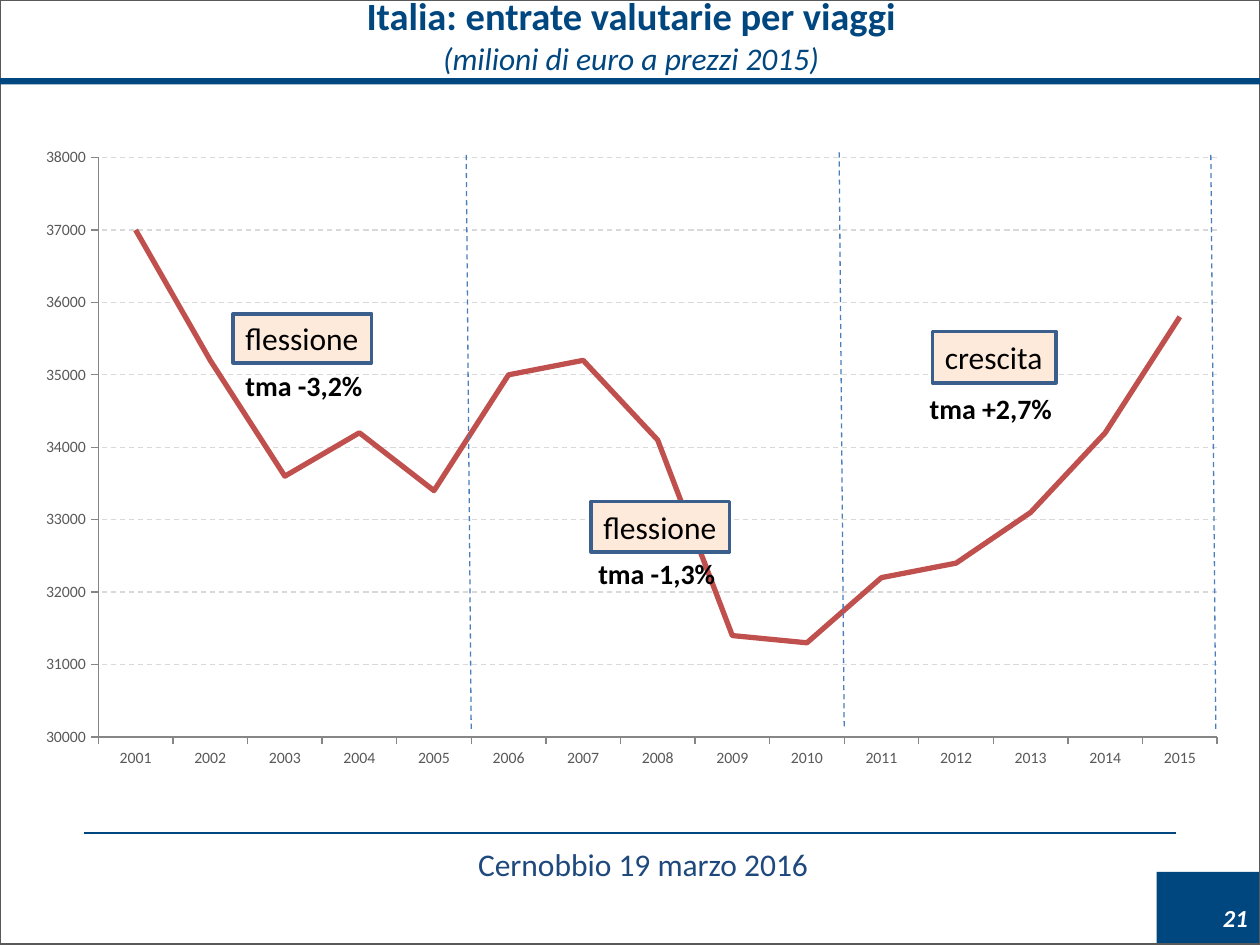
from typing import NamedTuple

from lxml import etree
from pptx import Presentation
from pptx.chart import data
from pptx.dml import color
from pptx.enum import chart as charts, dml, shapes, text
from pptx.oxml import parse_xml
from pptx.oxml import ns
from pptx.util import Inches, Pt

NAVY = "00467F"
GREY = "595959"
BLACK = "000000"
FONT = "Calibri"


class Box(NamedTuple):
    left: float
    top: float
    width: float
    height: float

    def inches(self) -> list:
        return [Inches(side) for side in self]


class Trend(NamedTuple):
    label: str
    label_box: Box
    rate: str
    rate_box: Box


TRENDS = [
    Trend("crescita", Box(7.4, 2.63, 0.98, 0.41), "tma +2,7%", Box(7.28, 3.06, 1.18, 0.37)),
    Trend("flessione", Box(4.69, 3.98, 1.1, 0.4), "tma -1,3%", Box(4.65, 4.37, 1.14, 0.37)),
    Trend("flessione", Box(1.85, 2.49, 1.1, 0.39), "tma -3,2%", Box(1.85, 2.88, 1.14, 0.37)),
]
PERIOD_ENDS = [(3.7, 1.23), (6.66, 1.21), (9.61, 1.23)]
REVENUES = [37000, 35200, 33600, 34200, 33400, 35000, 35200, 34100,
            31400, 31300, 32200, 32400, 33100, 34200, 35800]


def rgb(code: str) -> color.RGBColor:
    return color.RGBColor.from_string(code)


def style_line(line, code: str, width: float, dashed: bool = False) -> None:
    line.color.rgb = rgb(code)
    line.width = Pt(width)
    if dashed:
        line.dash_style = dml.MSO_LINE.DASH


def add_rect(slide, box: Box, fill: str | None = None,
             line: str | None = None, width: float = 1):
    rect = slide.shapes.add_shape(shapes.MSO_SHAPE.RECTANGLE, *box.inches())
    rect.shadow.inherit = False
    if fill:
        rect.fill.solid()
        rect.fill.fore_color.rgb = rgb(fill)
    else:
        rect.fill.background()
    if line:
        style_line(rect.line, line, width)
    else:
        rect.line.fill.background()
    return rect


def write(paragraph, wording: str, *, size: float, ink: str = BLACK, bold: bool = False,
          italic: bool = False, align=text.PP_ALIGN.LEFT) -> None:
    paragraph.alignment = align
    run = paragraph.add_run()
    run.text = wording
    run.font.name = FONT
    run.font.size = Pt(size)
    run.font.bold = bold
    run.font.italic = italic
    run.font.color.rgb = rgb(ink)


def add_frame(slide, box: Box, wrap: bool = True):
    frame = slide.shapes.add_textbox(*box.inches()).text_frame
    frame.word_wrap = wrap
    return frame


def add_rule(slide, start: tuple, end: tuple, code: str, width: float, dashed: bool = False) -> None:
    rule = slide.shapes.add_connector(
        shapes.MSO_CONNECTOR.STRAIGHT, *[Inches(side) for side in (*start, *end)])
    style_line(rule.line, code, width, dashed)
    etree.SubElement(rule._element.spPr, ns.qn("a:effectLst"))


def add_revenue_chart(slide, box: Box) -> None:
    revenue = data.CategoryChartData(number_format="0")
    revenue.categories = [str(year) for year in range(2001, 2016)]
    revenue.add_series("Series 1", REVENUES)
    chart = slide.shapes.add_chart(charts.XL_CHART_TYPE.LINE, *box.inches(), revenue).chart
    chart.has_legend = False
    chart.has_title = False
    chart.font.name = FONT
    chart.font.size = Pt(10)

    for axis in (chart.category_axis, chart.value_axis):
        axis.tick_labels.font.size = Pt(9)
        axis.tick_labels.font.color.rgb = rgb(GREY)
        axis.major_tick_mark = charts.XL_TICK_MARK.OUTSIDE
        style_line(axis.format.line, "868686", 0.75)
    values = chart.value_axis
    values.minimum_scale, values.maximum_scale, values.major_unit = 30000, 38000, 1000
    values.tick_labels.number_format = "0"
    values.tick_labels.number_format_is_linked = False
    style_line(values.major_gridlines.format.line, "D9D9D9", 0.75, dashed=True)

    plot = chart.plots[0]
    plot.vary_by_categories = False
    series = plot.series[0]
    series.smooth = False
    series.marker.style = charts.XL_MARKER_STYLE.NONE
    style_line(series.format.line, "C0504D", 3)

    plot_area = chart._chartSpace.chart.plotArea
    for automatic in plot_area.findall(ns.qn("c:layout")):
        plot_area.remove(automatic)
    inner = Box(0.78, 1.25, 8.88, 4.6)
    shares = {
        "x": (inner.left - box.left) / box.width,
        "y": (inner.top - box.top) / box.height,
        "w": inner.width / box.width,
        "h": inner.height / box.height,
    }
    sizes = "".join(f'<c:{key} val="{share:.4f}"/>' for key, share in shares.items())
    plot_area.insert(0, parse_xml(
        f'<c:layout {ns.nsdecls("c")}><c:manualLayout><c:layoutTarget val="inner"/>'
        f'<c:xMode val="edge"/><c:yMode val="edge"/>{sizes}</c:manualLayout></c:layout>'))


def add_trend(slide, trend: Trend) -> None:
    label = add_rect(slide, trend.label_box, "FDEADA", "3A5F8C", 2).text_frame
    label.word_wrap = False
    label.vertical_anchor = text.MSO_ANCHOR.MIDDLE
    write(label.paragraphs[0], trend.label, size=18)
    rate = add_frame(slide, trend.rate_box, wrap=False)
    write(rate.paragraphs[0], trend.rate, size=16, bold=True)


def main() -> None:
    deck = Presentation()
    deck.slide_width, deck.slide_height = Inches(10), Inches(7.5)
    slide = deck.slides.add_slide(deck.slide_layouts[6])
    center = text.PP_ALIGN.CENTER

    add_rect(slide, Box(9.18, 6.92, 0.82, 0.58), NAVY)
    add_rule(slide, (0.67, 6.61), (9.33, 6.61), NAVY, 1.5)
    add_rect(slide, Box(0, 0, 10, 7.49), line=GREY)
    page = add_frame(slide, Box(9.33, 7.12, 0.95, 0.39))
    write(page.paragraphs[0], "21", size=14, ink="FFFFFF", bold=True, italic=True, align=center)
    footer = add_frame(slide, Box(1.59, 6.66, 7.03, 0.46))
    write(footer.paragraphs[0], "Cernobbio 19 marzo 2016", size=18, ink="1F497D", align=center)
    add_rect(slide, Box(0, 0.62, 10, 0.05), NAVY)

    add_revenue_chart(slide, Box(0.17, 1.07, 9.69, 5.12))

    title = add_frame(slide, Box(0.51, -0.11, 9, 0.71))
    write(title.paragraphs[0], "Italia: entrate valutarie per viaggi",
          size=22, ink=NAVY, bold=True, align=center)
    write(title.add_paragraph(), "(milioni di euro a prezzi 2015)",
          size=18, ink=NAVY, italic=True, align=center)

    for left, top in PERIOD_ENDS:
        add_rule(slide, (left, top), (left + 0.04, top + 4.57), "4B7EBC", 0.75, dashed=True)
    for trend in TRENDS:
        add_trend(slide, trend)

    deck.save("out.pptx")


if __name__ == "__main__":
    main()
